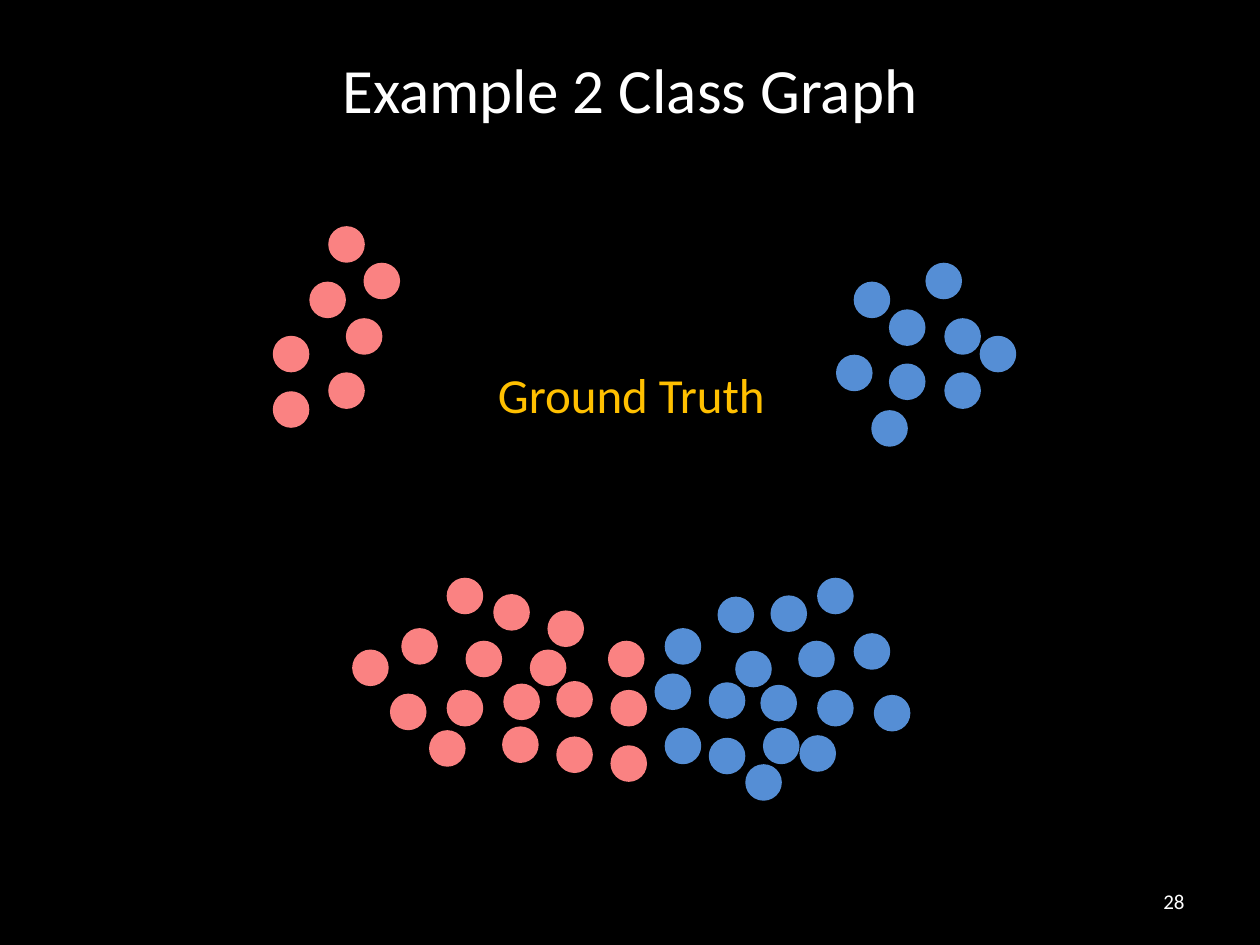
"""Build the two-class graph slide with its ground-truth clusters."""
from dataclasses import dataclass

import pptx
import pptx.dml.color
import pptx.enum.shapes
import pptx.enum.text
import pptx.util

Inches = pptx.util.Inches
RGB = pptx.dml.color.RGBColor.from_string
ALIGN = pptx.enum.text.PP_ALIGN
ANCHOR = pptx.enum.text.MSO_ANCHOR


@dataclass(frozen=True)
class Theme:
    """Colours, font and type sizes."""
    background: str = "000000"
    text: str = "FFFFFF"
    accent: str = "FFC000"
    red: str = "FA8282"
    blue: str = "558ED5"
    font: str = "Calibri"
    title_size: int = 36
    label_size: int = 28
    number_size: int = 12


@dataclass(frozen=True)
class Label:
    """One line of text with its place and look."""
    text: str
    box: tuple[float, float, float, float]
    size: int
    color: str
    align: ALIGN
    anchor: ANCHOR = ANCHOR.MIDDLE


@dataclass(frozen=True)
class Cluster:
    """Nodes of one class, given by their centres."""
    name: str
    color: str
    centers: tuple[tuple[float, float], ...]


THEME = Theme()
NODE_DIAMETER = 0.29

TITLE = Label("Example 2 Class Graph", (0.5, 0.08, 9, 1.25),
              THEME.title_size, THEME.text, ALIGN.CENTER)
LABELS = (
    Label("28", (7.17, 6.95, 2.33, 0.4),
          THEME.number_size, THEME.text, ALIGN.RIGHT),
    Label("Ground Truth", (3.82, 2.84, 2.38, 0.57),
          THEME.label_size, THEME.accent, ALIGN.CENTER, ANCHOR.TOP),
)
CLUSTERS = (
    Cluster("Upper red", THEME.red, (
        (2.6, 2.38), (2.89, 2.67), (2.31, 2.81), (2.75, 3.1),
        (3.03, 2.23), (2.31, 3.25), (2.75, 1.94))),
    Cluster("Upper blue", THEME.blue, (
        (6.92, 2.38), (6.78, 2.96), (7.2, 2.6), (7.64, 3.1), (7.64, 2.67),
        (7.2, 3.03), (7.49, 2.23), (7.06, 3.4), (7.92, 2.81))),
    Cluster("Lower red", THEME.red, (
        (3.84, 5.23), (3.69, 5.62), (3.33, 5.13), (3.24, 5.65), (4.14, 5.57),
        (2.94, 5.3), (3.55, 5.94), (3.69, 4.73), (4.13, 5.91), (4.56, 5.55),
        (4.99, 6.06), (4.99, 5.62), (4.56, 5.99), (4.49, 4.99), (4.06, 4.86),
        (4.97, 5.23), (4.35, 5.3))),
    Cluster("Lower blue", THEME.blue, (
        (6.48, 5.23), (6.63, 5.62), (5.84, 4.88), (7.08, 5.66), (6.18, 5.58),
        (6.92, 5.17), (6.49, 5.98), (6.63, 4.73), (6.2, 5.92), (5.77, 5.56),
        (5.42, 5.92), (5.34, 5.49), (5.77, 6), (6.06, 6.21), (6.26, 4.87),
        (5.42, 5.13), (5.98, 5.31))),
)


def apply(target: object, values: dict) -> None:
    """Set each named attribute of the target."""
    for name, value in values.items():
        setattr(target, name, value)


def write_label(box: object, label: Label) -> None:
    """Place a text shape and fill it with the formatted label."""
    left, top, width, height = map(Inches, label.box)
    apply(box, {"left": left, "top": top, "width": width, "height": height})
    frame = box.text_frame
    apply(frame, {"word_wrap": True, "vertical_anchor": label.anchor})
    para = frame.paragraphs[0]
    para.alignment = label.align
    span = para.add_run()
    span.text = label.text
    apply(span.font, {"name": THEME.font, "size": pptx.util.Pt(label.size)})
    span.font.color.rgb = RGB(label.color)


def draw_cluster(page: object, cluster: Cluster) -> None:
    """Draw every node of a cluster as a plain circle."""
    size = Inches(NODE_DIAMETER)
    for number, (x, y) in enumerate(cluster.centers, start=1):
        node = page.shapes.add_shape(
            pptx.enum.shapes.MSO_SHAPE.OVAL,
            Inches(x - NODE_DIAMETER / 2), Inches(y - NODE_DIAMETER / 2),
            size, size)
        node.name = f"{cluster.name} node {number}"
        node.shadow.inherit = False
        node.fill.solid()
        node.fill.fore_color.rgb = RGB(cluster.color)
        node.line.fill.background()


def main() -> None:
    """Build and save the deck."""
    deck = pptx.Presentation()
    apply(deck, {"slide_width": Inches(10), "slide_height": Inches(7.5)})
    page = deck.slides.add_slide(deck.slide_layouts.get_by_name("Title Only"))
    page.background.fill.solid()
    page.background.fill.fore_color.rgb = RGB(THEME.background)
    for cluster in CLUSTERS:
        draw_cluster(page, cluster)
    write_label(page.shapes.title, TITLE)
    for label in LABELS:
        box = page.shapes.add_textbox(*map(Inches, label.box))
        write_label(box, label)
    deck.save("out.pptx")


if __name__ == "__main__":
    main()
